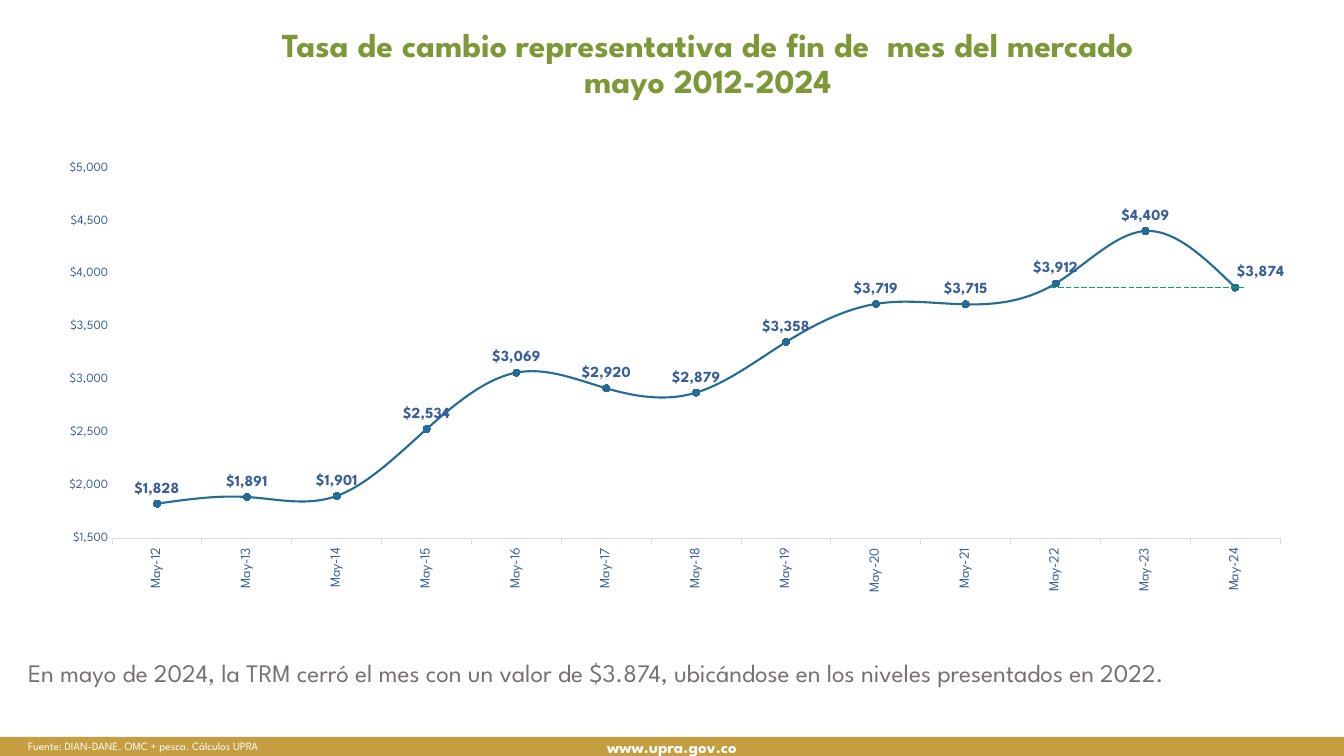
from lxml.etree import SubElement
from pptx import Presentation
from pptx.chart.data import CategoryChartData
from pptx.dml.color import RGBColor
from pptx.enum.chart import XL_CHART_TYPE, XL_LABEL_POSITION, XL_MARKER_STYLE, XL_TICK_MARK
from pptx.enum.dml import MSO_LINE
from pptx.enum.shapes import MSO_CONNECTOR, MSO_SHAPE
from pptx.enum.text import MSO_ANCHOR, PP_ALIGN
from pptx.oxml import parse_xml
from pptx.oxml.ns import nsdecls, qn
from pptx.util import Inches, Pt

FONT = "League Spartan"
WIDTH, HEIGHT = 13.33, 7.5
GREEN, GOLD, WHITE, GREY = "7D9837", "C59E41", "FFFFFF", "767171"
BLUE, LABEL_BLUE, AXIS_GREY, DASH_GREEN = "236C95", "395F9B", "D9D9D9", "00B050"
RATES = [1828, 1891, 1901, 2534, 3069, 2920, 2879, 3358, 3719, 3715, 3912, 4409, 3874]
FIRST_YEAR = 12
AXIS_MIN, AXIS_MAX = 1500, 5000
PLOT = (0.059, 0.03, 0.921, 0.83)


def color(value):
    return RGBColor.from_string(value)


def inches(box):
    return [Inches(v) for v in box]


def style_font(font, size, fill, bold=False):
    font.name, font.size, font.bold = FONT, Pt(size), bold
    font.color.rgb = color(fill)


def write(sp, text, size, fill, align, bold=False, anchor=MSO_ANCHOR.TOP, spacing=1.0):
    tf = sp.text_frame
    tf.word_wrap = True
    tf.vertical_anchor = anchor
    p = tf.paragraphs[0]
    p.alignment, p.line_spacing = align, spacing
    r = p.add_run()
    r.text = text
    style_font(r.font, size, fill, bold)


def add_text(s, box, *args, **kwargs):
    write(s.shapes.add_textbox(*inches(box)), *args, **kwargs)


def add_footer(s, box):
    x, y, w, h = box
    bar = s.shapes.add_shape(MSO_SHAPE.RECTANGLE, *inches(box))
    bar.shadow.inherit = False
    bar.fill.solid()
    bar.fill.fore_color.rgb = color(GOLD)
    bar.line.fill.background()
    write(bar, "www.upra.gov.co", 12, WHITE, PP_ALIGN.CENTER, True, MSO_ANCHOR.MIDDLE)
    add_text(s, (x + 0.18, y - 0.02, w - 0.42, h + 0.05),
             "Fuente: DIAN-DANE. OMC + pesca. Cálculos UPRA", 8, WHITE, PP_ALIGN.JUSTIFY)


def manual_layout(**values):
    layout = parse_xml(f"<c:layout {nsdecls('c')}><c:manualLayout/></c:layout>")
    for tag, value in values.items():
        SubElement(layout[0], qn(f"c:{tag}")).set("val", str(value))
    return layout


def style_axes(chart):
    cat, val = chart.category_axis, chart.value_axis
    cat.major_tick_mark = XL_TICK_MARK.OUTSIDE
    cat.format.line.color.rgb = color(AXIS_GREY)
    cat.format.line.width = Pt(0.75)
    style_font(cat.tick_labels.font, 10, LABEL_BLUE)
    cat._element.find(qn("c:txPr")).find(qn("a:bodyPr")).set("rot", "-5400000")
    val.minimum_scale, val.maximum_scale, val.major_unit = AXIS_MIN, AXIS_MAX, 500
    val.has_major_gridlines = False
    val.major_tick_mark = XL_TICK_MARK.NONE
    val.format.line.fill.background()
    style_font(val.tick_labels.font, 9, LABEL_BLUE)


def style_series(series):
    series.smooth = True
    series.format.line.color.rgb = color(BLUE)
    series.format.line.width = Pt(1.5)
    marker = series.marker
    marker.style, marker.size = XL_MARKER_STYLE.CIRCLE, 5
    marker.format.fill.solid()
    marker.format.fill.fore_color.rgb = color(BLUE)
    marker.format.line.color.rgb = color(BLUE)
    labels = series.data_labels
    labels.show_value = True
    labels.position = XL_LABEL_POSITION.ABOVE
    style_font(labels.font, 11, LABEL_BLUE, True)
    last = len(RATES) - 1
    label = series.points[last].data_label
    style_font(label.font, 11, LABEL_BLUE, True)
    label.position = XL_LABEL_POSITION.ABOVE
    labels._element.find(qn("c:dLbl")).insert(1, manual_layout(x=0.02, y=0))


def add_rate_chart(s, box):
    x, y, w, h = box
    data = CategoryChartData(number_format='"$"#,##0')
    data.categories = [f"May-{FIRST_YEAR + i}" for i in range(len(RATES))]
    data.add_series("TRM", RATES)
    chart = s.shapes.add_chart(XL_CHART_TYPE.LINE_MARKERS, *inches(box), data).chart
    chart.has_legend = chart.has_title = False
    style_font(chart.font, 10, LABEL_BLUE)
    chart.plots[0].vary_by_categories = False
    style_axes(chart)
    style_series(chart.plots[0].series[0])
    area = chart._chartSpace.chart.plotArea
    for old in area.findall(qn("c:layout")):
        area.remove(old)
    px, py, pw, ph = PLOT
    area.insert(0, manual_layout(layoutTarget="inner", xMode="edge", yMode="edge",
                                 x=px, y=py, w=pw, h=ph))

    step = w * pw / len(RATES)
    right = x + w * (px + pw) - step * 0.4
    left = x + w * px + step * 10.45
    level = y + h * (py + ph * (AXIS_MAX - RATES[-1]) / (AXIS_MAX - AXIS_MIN))
    line = s.shapes.add_connector(MSO_CONNECTOR.STRAIGHT, *inches((right, level, left, level)))
    line.line.color.rgb = color(DASH_GREEN)
    line.line.width = Pt(0.5)
    line.line.dash_style = MSO_LINE.LONG_DASH
    SubElement(line._element.spPr, qn("a:effectLst"))


def main():
    prs = Presentation()
    prs.slide_width, prs.slide_height = Inches(WIDTH), Inches(HEIGHT)
    s = prs.slides.add_slide(prs.slide_layouts[6])
    add_footer(s, (0, 7.31, WIDTH, 0.19))
    add_text(s, (2.44, 0.23, 9.16, 1.07),
             "Tasa de cambio representativa de fin de  mes del mercado mayo 2012-2024",
             24, GREEN, PP_ALIGN.CENTER, True, spacing=0.9)
    add_text(s, (0.18, 6.51, 12.47, 0.62),
             "En mayo de 2024, la TRM cerró el mes con un valor de $3.874, "
             "ubicándose en los niveles presentados en 2022.",
             18, GREY, PP_ALIGN.JUSTIFY, spacing=0.9)
    add_rate_chart(s, (0.37, 1.54, 12.58, 4.42))
    prs.save("out.pptx")


if __name__ == "__main__":
    main()
